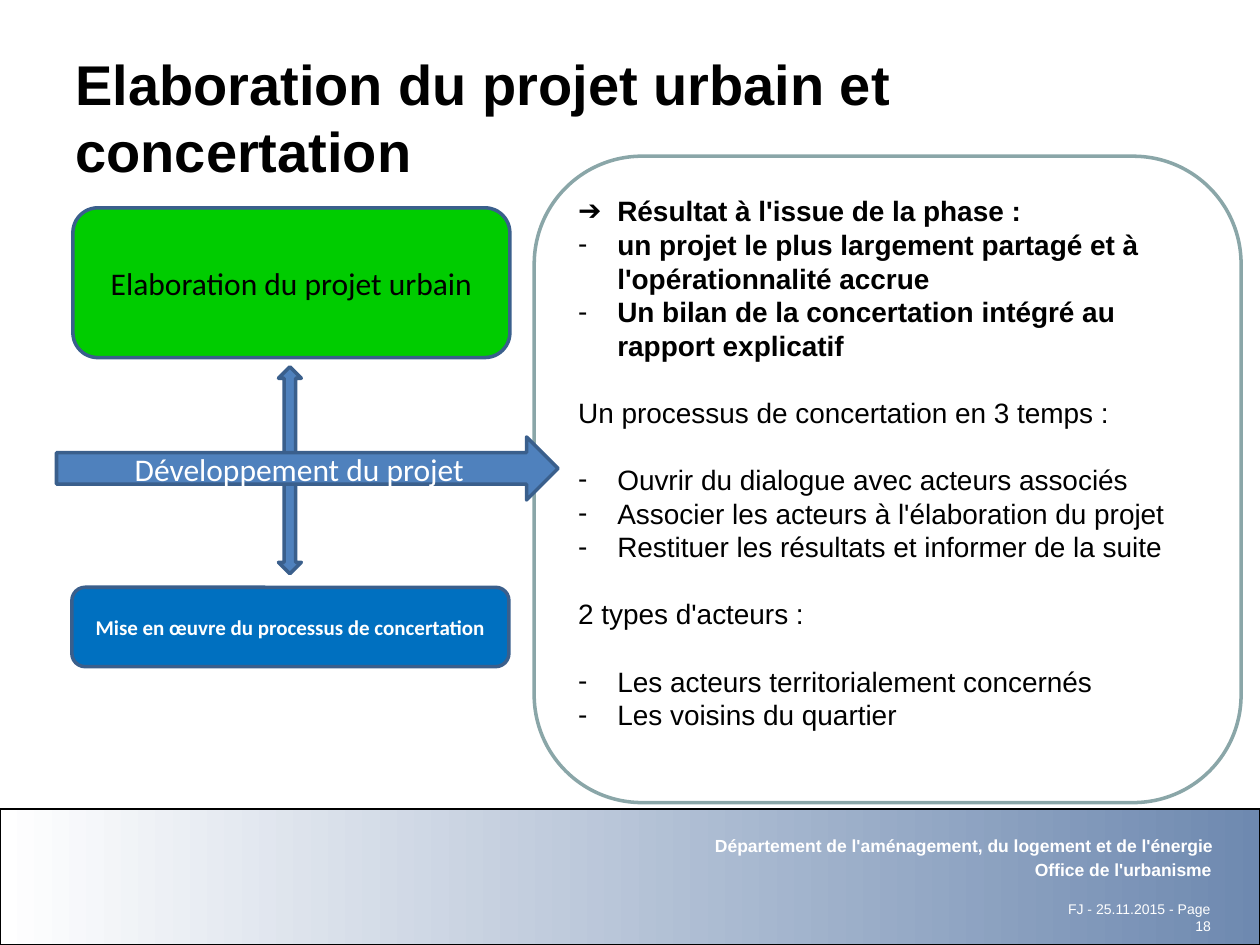
"""Build the slide on urban project design and public consultation."""
from dataclasses import dataclass

from lxml import etree
from pptx import Presentation
from pptx.dml.color import RGBColor as Rgb
from pptx.enum.shapes import MSO_SHAPE as Shape
from pptx.enum.text import MSO_ANCHOR as Anchor, PP_ALIGN as Align
from pptx.oxml.ns import qn
from pptx.util import Cm, Pt


@dataclass(frozen=True)
class Theme:
    black: str = "000000"
    white: str = "FFFFFF"
    green: str = "00CC00"
    blue: str = "0070C0"
    arrow: str = "4F81BD"
    outline: str = "3A5F8C"
    panel_outline: str = "8AA6A8"
    band_end: str = "6E89B0"
    body_font: str = "Arial"
    diagram_font: str = "Calibri"
    title_size: int = 32
    step_size: int = 18
    body_size: int = 16
    process_size: int = 12
    footer_size: int = 10
    page_size: int = 8


THEME = Theme()

RESULTS = [
    ("➔", "Résultat à l'issue de la phase :"),
    ("-", "un projet le plus largement partagé et à l'opérationnalité accrue"),
    ("-", "Un bilan de la concertation intégré au rapport explicatif"),
]
PROCESS = [
    ("-", "Ouvrir du dialogue avec acteurs associés"),
    ("-", "Associer les acteurs à l'élaboration du projet"),
    ("-", "Restituer les résultats et informer de la suite"),
]
ACTORS = [
    ("-", "Les acteurs territorialement concernés"),
    ("-", "Les voisins du quartier"),
]
PANEL_GROUPS = [
    (RESULTS, True),
    ([(None, "Un processus de concertation en 3 temps :")], False),
    (PROCESS, False),
    ([(None, "2 types d'acteurs :")], False),
    (ACTORS, False),
]


def style(paragraph, size, color, font=THEME.body_font, bold=False, align=Align.LEFT):
    """Set the alignment of a paragraph and the look of its runs."""
    paragraph.alignment = align
    for run in paragraph.runs:
        run.font.name = font
        run.font.size = Pt(size)
        run.font.bold = bold
        run.font.color.rgb = Rgb.from_string(color)


def add_bullet(paragraph, mark):
    """Give a paragraph a hanging indent and a bullet character."""
    properties = paragraph._p.get_or_add_pPr()
    properties.set("marL", str(Cm(0.79)))
    properties.set("indent", str(-Cm(0.79)))
    etree.SubElement(properties, qn("a:buFont"), typeface=THEME.body_font)
    etree.SubElement(properties, qn("a:buChar"), char=mark)


def add_label(slide, box, text, size, color, bold=False, align=Align.RIGHT, anchor=Anchor.TOP):
    """Add a wrapped text box holding one paragraph."""
    frame = slide.shapes.add_textbox(*map(Cm, box)).text_frame
    frame.word_wrap = True
    frame.vertical_anchor = anchor
    frame.text = text
    style(frame.paragraphs[0], size, color, bold=bold, align=align)


def add_outlined(slide, kind, box, fill, outline=THEME.outline, width=2):
    """Add a flat preset shape with a solid fill and an outline."""
    shape = slide.shapes.add_shape(kind, *map(Cm, box))
    shape.shadow.inherit = False
    shape.fill.solid()
    shape.fill.fore_color.rgb = Rgb.from_string(fill)
    shape.line.color.rgb = Rgb.from_string(outline)
    shape.line.width = Pt(width)
    return shape


def add_step(slide, kind, box, fill, text, size, color, bold=False):
    """Add a diagram shape with a centred caption."""
    frame = add_outlined(slide, kind, box, fill).text_frame
    frame.word_wrap = True
    frame.vertical_anchor = Anchor.MIDDLE
    frame.text = text
    style(frame.paragraphs[0], size, color, THEME.diagram_font, bold, Align.CENTER)


def add_footer(slide):
    """Add the gradient band with the department lines and the page mark."""
    band = add_outlined(slide, Shape.RECTANGLE, (0, 16.31, 25.4, 2.74),
                        THEME.white, THEME.black, 1)
    band.fill.gradient()
    band.fill.gradient_angle = 0
    for stop, color in zip(band.fill.gradient_stops, (THEME.white, THEME.band_end)):
        stop.color.rgb = Rgb.from_string(color)
    add_label(slide, (21.18, 18.03, 3.48, 0.94), "FJ - 25.11.2015 - Page 18",
              THEME.page_size, THEME.white)
    add_label(slide, (3.89, 17.2, 20.78, 0.28), "Office de l'urbanisme",
              THEME.footer_size, THEME.white, True)
    add_label(slide, (3.86, 16.71, 20.83, 0.3),
              "Département de l'aménagement, du logement et de l'énergie",
              THEME.footer_size, THEME.white, True)


def add_panel(slide):
    """Add the rounded panel listing results, process and actors."""
    panel = add_outlined(slide, Shape.ROUNDED_RECTANGLE, (10.77, 3.15, 14.25, 13.03),
                         THEME.white, THEME.panel_outline)
    frame = panel.text_frame
    frame.word_wrap = True
    frame.vertical_anchor = Anchor.TOP
    paragraph = frame.paragraphs[0]
    for group, (entries, bold) in enumerate(PANEL_GROUPS):
        for position, (mark, text) in enumerate(entries):
            if group or position:
                paragraph = frame.add_paragraph()
            if group and not position:
                paragraph.space_before = Pt(THEME.body_size * 1.2)
            paragraph.text = text
            if mark:
                add_bullet(paragraph, mark)
            style(paragraph, THEME.body_size, THEME.black, bold=bold)


def main():
    """Compose and save the slide."""
    deck = Presentation()
    deck.slide_width, deck.slide_height = Cm(25.4), Cm(19.05)
    slide = deck.slides.add_slide(deck.slide_layouts[6])
    add_footer(slide)
    add_label(slide, (1.27, 0.76, 22.86, 3.18), "Elaboration du projet urbain et concertation",
              THEME.title_size, THEME.black, True, Align.LEFT, Anchor.MIDDLE)
    add_step(slide, Shape.ROUNDED_RECTANGLE, (1.45, 11.84, 8.81, 1.6), THEME.blue,
             "Mise en œuvre du processus de concertation", THEME.process_size, THEME.white, True)
    exchange = add_outlined(slide, Shape.LEFT_RIGHT_ARROW, (3.76, 9.25, 4.17, 0.46), THEME.arrow)
    exchange.rotation = 270
    add_step(slide, Shape.ROUNDED_RECTANGLE, (1.47, 4.19, 8.81, 3.02), THEME.green,
             "Elaboration du projet urbain", THEME.step_size, THEME.black)
    add_panel(slide)
    add_step(slide, Shape.RIGHT_ARROW, (1.14, 8.81, 10.11, 1.27), THEME.arrow,
             "Développement du projet", THEME.step_size, THEME.white)
    deck.save("out.pptx")


if __name__ == "__main__":
    main()
